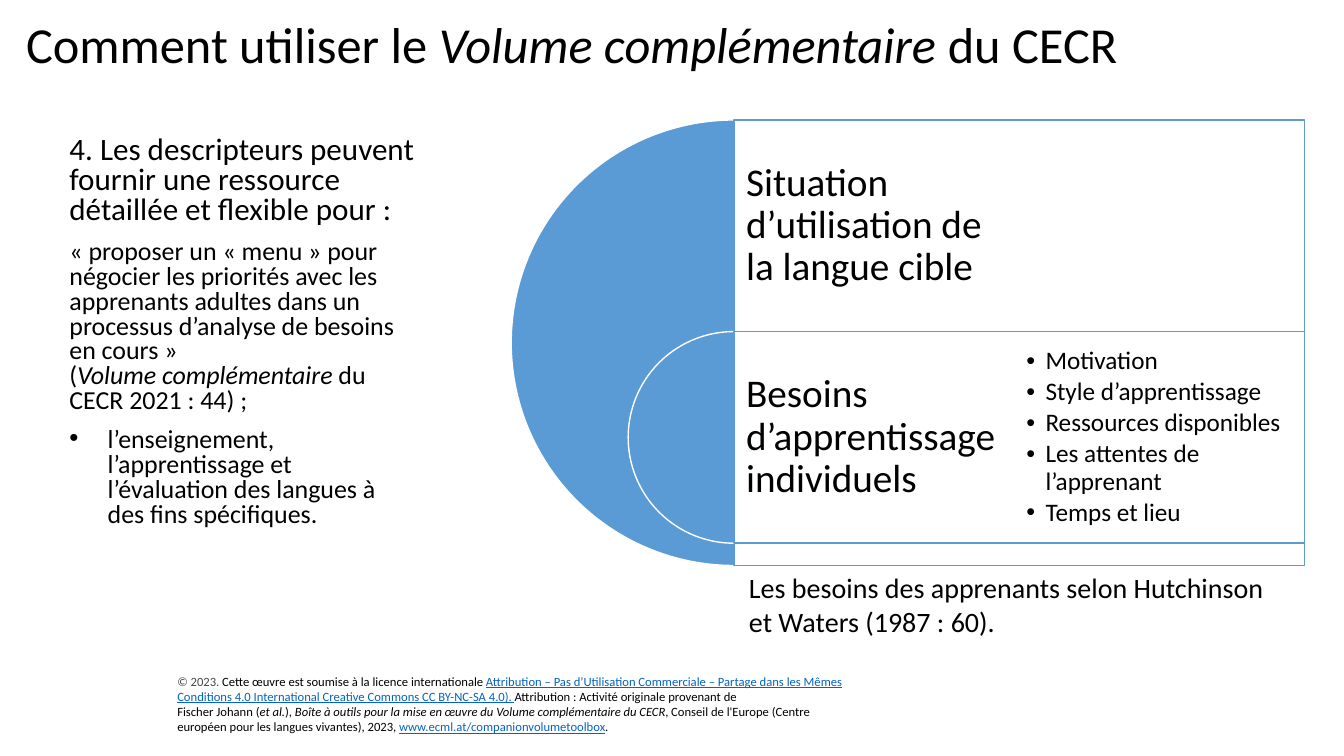
from dataclasses import dataclass

from lxml import etree
from pptx import Presentation
from pptx.dml.color import RGBColor as RGB
from pptx.enum.shapes import MSO_SHAPE as SHAPE
from pptx.enum.text import MSO_ANCHOR as ANCHOR
from pptx.oxml.ns import qn
from pptx.util import Inches, Pt


@dataclass(frozen=True)
class Theme:
    font: str = "Calibri"
    ink: str = "000000"
    muted: str = "464646"
    link: str = "0563C1"
    accent: str = "5B9BD5"
    paper: str = "FFFFFF"
    title: float = 36
    label: float = 28
    lead: float = 22.2
    caption: float = 20
    body: float = 18.5
    item: float = 18
    footer: float = 9


T = Theme()
ITALIC = {"italic": True}
LINK = {"color": T.link, "underline": True}


def add_bullet(p, indent):
    pPr = p._p.get_or_add_pPr()
    pPr.set("marL", str(Inches(indent)))
    pPr.set("indent", str(-Inches(indent)))
    etree.SubElement(pPr, qn("a:buFont")).set("typeface", "Arial")
    etree.SubElement(pPr, qn("a:buChar")).set("char", "•")


def add_runs(p, runs, size):
    """Each run is a string or a (string, format) pair; a newline breaks the line."""
    for run in runs:
        text, fmt = (run, {}) if isinstance(run, str) else run
        fmt = {"color": T.ink, **fmt}
        for i, part in enumerate(text.split("\n")):
            if i:
                p.add_line_break()
            if not part:
                continue
            r = p.add_run()
            r.text = part
            r.font.name, r.font.size = T.font, Pt(size)
            for key, value in fmt.items():
                if key == "color":
                    r.font.color.rgb = RGB.from_string(value)
                else:
                    setattr(r.font, key, value)


def add_text(s, box, paragraphs, size, anchor=ANCHOR.TOP, inset=None, wrap=True):
    """Each paragraph is a dict: runs, and optionally size, bullet and spacing."""
    tf = s.shapes.add_textbox(*map(Inches, box)).text_frame
    tf.word_wrap, tf.vertical_anchor = wrap, anchor
    if inset is not None:
        for side in ("left", "top", "right", "bottom"):
            setattr(tf, f"margin_{side}", Inches(inset))
    for i, par in enumerate(paragraphs):
        p = tf.add_paragraph() if i else tf.paragraphs[0]
        p.line_spacing = par.get("line", 1.0)
        p.space_before = Pt(par.get("before", 0) if i else 0)
        p.space_after = Pt(par.get("after", 0))
        if "bullet" in par:
            add_bullet(p, par["bullet"])
        add_runs(p, par["runs"], par.get("size", size))


def add_block(s, kind, box, fill, line):
    sp = s.shapes.add_shape(kind, *map(Inches, box))
    sp.shadow.inherit = False
    sp.fill.solid()
    sp.fill.fore_color.rgb = RGB.from_string(fill)
    sp.line.color.rgb = RGB.from_string(line)
    sp.line.width = Pt(1)
    return sp


def add_half_disc(s, box):
    sp = add_block(s, SHAPE.PIE, box, T.accent, T.paper)
    sp.adjustments[0], sp.adjustments[1] = 54, 162


def add_panel(s, box):
    sp = add_block(s, SHAPE.RECTANGLE, box, T.paper, T.accent)
    color = sp.fill._xPr.find(qn("a:solidFill"))[0]
    etree.SubElement(color, qn("a:alpha")).set("val", "90000")


def needs_diagram(s, box, levels):
    """Nested half discs, each with a panel; a level is (label, items)."""
    x, y, w, h = box
    axis, step = x + h / 2, 0.475 * h
    col = (w - h / 2) / 2
    for i, (label, items) in enumerate(levels):
        top = y + i * step
        size = h if i == 0 else step
        add_half_disc(s, (axis - size / 2, top, size, size))
        add_panel(s, (axis, top, 2 * col, size))
        add_text(s, (axis, top, col, step), [{"runs": [label], "line": 0.9}],
                 T.label, ANCHOR.MIDDLE, 0.12)
        if items:
            bullets = [{"runs": [item], "line": 0.9, "after": 2.7, "bullet": 0.19}
                       for item in items]
            add_text(s, (axis + col, top, col, step), bullets, T.item,
                     ANCHOR.MIDDLE, 0.07)


def title(s, box):
    runs = ["Comment utiliser le ", ("Volume complémentaire ", ITALIC), "du CECR"]
    add_text(s, box, [{"runs": runs, "line": 0.9}], T.title, ANCHOR.BOTTOM)


def descriptors(s, box):
    spacing = {"line": 0.8, "before": 10}
    add_text(s, box, [
        {"runs": ["4. Les descripteurs peuvent fournir une ressource détaillée "
                  "et flexible pour :"], "size": T.lead, **spacing},
        {"runs": ["« proposer un « menu » pour négocier les priorités avec les "
                  "apprenants adultes dans un processus d’analyse de besoins "
                  "en cours » \n(", ("Volume complémentaire ", ITALIC),
                  "du CECR 2021 : 44) ;"], **spacing},
        {"runs": ["l’enseignement, l’apprentissage et l’évaluation des langues "
                  "à des fins spécifiques."], "bullet": 0.38, **spacing},
    ], T.body)


def caption(s, box):
    lines = ["Les besoins des apprenants selon Hutchinson", "et Waters (1987 : 60)."]
    add_text(s, box, [{"runs": [line]} for line in lines], T.caption, wrap=False)


def licence(s, box):
    add_text(s, box, [
        {"runs": [("© 2023. ", {"color": T.muted}),
                  "Cette œuvre est soumise à la licence internationale ",
                  ("Attribution – Pas d’Utilisation Commerciale – Partage dans les "
                   "Mêmes Conditions 4.0 International Creative Commons "
                   "CC BY-NC-SA 4.0). ", LINK),
                  "Attribution : Activité originale provenant de"]},
        {"runs": ["Fischer Johann (", ("et al.", ITALIC), "), ",
                  ("Boîte à outils pour la mise en œuvre du Volume complémentaire "
                   "du CECR", ITALIC),
                  ", Conseil de l'Europe (Centre européen pour les langues "
                  "vivantes), 2023, ",
                  ("www.ecml.at/companionvolumetoolbox", LINK), "."]},
    ], T.footer, ANCHOR.MIDDLE)


def main():
    prs = Presentation()
    prs.slide_width, prs.slide_height = Inches(13.33), Inches(7.5)
    s = prs.slides.add_slide(prs.slide_layouts[6])
    licence(s, (1.66, 6.63, 6.85, 0.71))
    title(s, (0.16, -0.25, 11.57, 1.04))
    descriptors(s, (0.59, 1.31, 3.62, 4.42))
    needs_diagram(s, (5.07, 1.19, 7.87, 4.42), [
        ("Situation d’utilisation de la langue cible", []),
        ("Besoins d’apprentissage individuels",
         ["Motivation", "Style d’apprentissage", "Ressources disponibles",
          "Les attentes de l’apprenant", "Temps et lieu"]),
    ])
    caption(s, (7.33, 5.61, 5.42, 0.77))
    prs.save("out.pptx")


if __name__ == "__main__":
    main()
